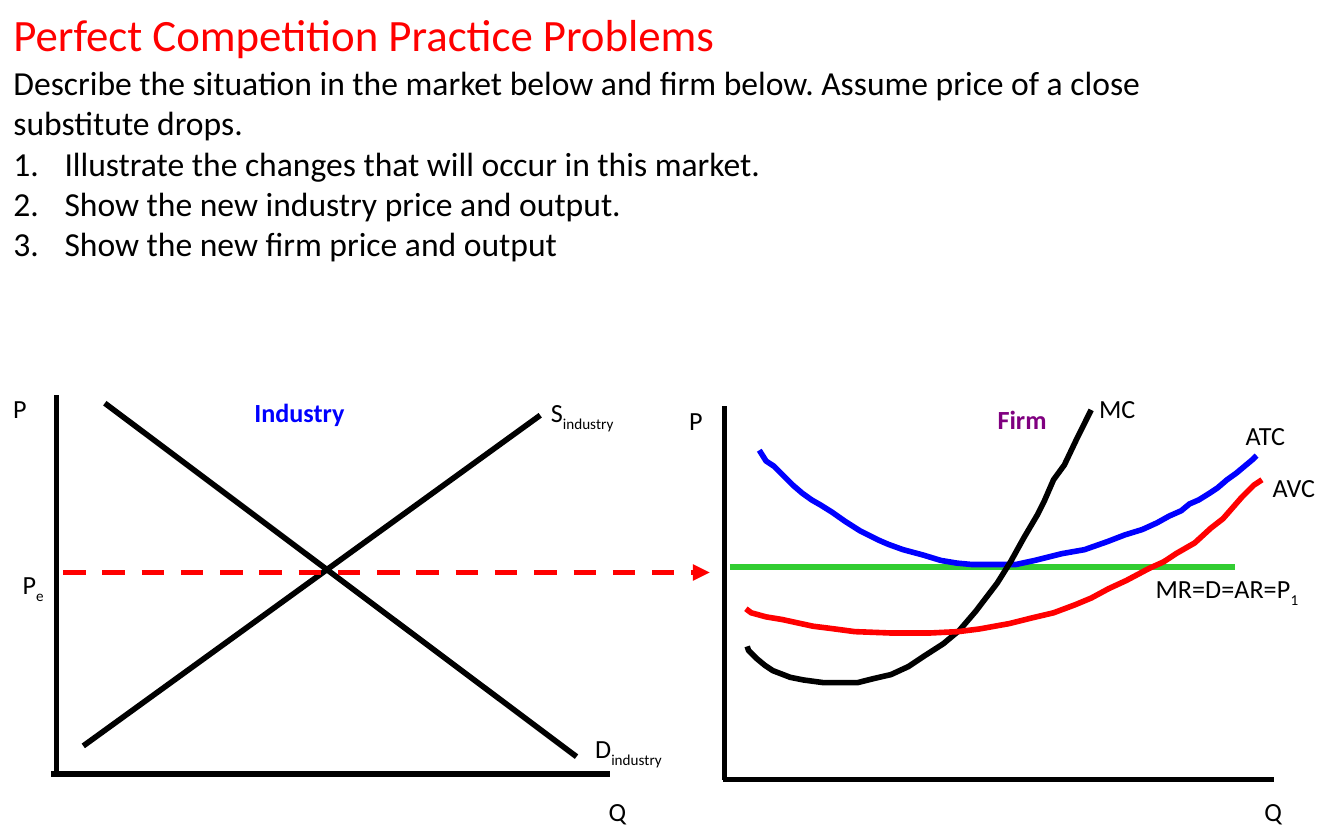
from lxml.etree import SubElement
from pptx import Presentation
from pptx.dml.color import RGBColor
from pptx.enum.dml import MSO_LINE
from pptx.enum.shapes import MSO_CONNECTOR
from pptx.enum.text import MSO_ANCHOR, MSO_AUTO_SIZE, PP_ALIGN
from pptx.oxml.ns import qn
from pptx.util import Inches, Pt

COLORS = {
    "black": "000000",
    "red": "FF0000",
    "blue": "0000FF",
    "green": "32CD32",
    "purple": "800080",
}

TITLE = "Perfect Competition Practice Problems"
INTRO = ("Describe the situation in the market below and firm below. "
         "Assume price of a close substitute drops.")
TASKS = [
    "Illustrate the changes that will occur in this market.",
    "Show the new industry price and output.",
    "Show the new firm price and output",
]

# start, end, color
LINES = [
    ((5.43, 4.22), (9.19, 4.22), "green"),
    ((0.42, 2.94), (0.42, 5.76), "black"),
    ((0.38, 5.76), (4.54, 5.76), "black"),
    ((0.78, 3.00), (4.29, 5.63), "black"),
    ((0.62, 5.55), (4.02, 3.09), "black"),
    ((5.39, 5.80), (5.39, 3.02), "black"),
    ((5.38, 5.80), (9.48, 5.80), "black"),
]

# text, left, top, width, format
LABELS = [
    ("P", 0, 2.87, 0.45, {}),
    ("Q", 4.43, 5.87, 0.51, {}),
    ("S", 4, 2.9, 1.04, {"sub": "industry"}),
    ("D", 4.33, 5.4, 1.07, {"sub": "industry"}),
    (" Industry", 1.75, 2.9, 1.28, {"color": "blue", "bold": True}),
    ("P", 5.03, 2.96, 0.45, {}),
    ("Q", 9.31, 5.87, 0.51, {}),
    (" Firm", 7.28, 2.95, 0.85, {"color": "purple", "bold": True}),
    ("MC", 8.08, 2.87, 0.67, {}),
    ("ATC", 9.17, 3.07, 0.75, {}),
    ("AVC", 9.37, 3.46, 0.8, {}),
    ("MR=D=AR=P", 8.5, 4.21, 1.79, {"sub": "1"}),
    ("P", 0.07, 4.18, 0.56, {"sub": "e"}),
]

ATC = [
    (5.65, 3.35), (5.7, 3.43), (5.76, 3.47), (5.83, 3.54), (5.9, 3.61),
    (5.97, 3.67), (6.04, 3.72), (6.11, 3.76), (6.19, 3.81), (6.29, 3.88),
    (6.4, 3.95), (6.46, 3.98), (6.54, 4.02), (6.61, 4.05), (6.72, 4.09),
    (6.87, 4.13), (7, 4.17), (7.12, 4.19), (7.23, 4.2), (7.34, 4.2),
    (7.45, 4.2), (7.56, 4.2), (7.7, 4.17), (7.9, 4.12), (8.07, 4.09),
    (8.24, 4.03), (8.37, 3.98), (8.5, 3.94), (8.61, 3.89), (8.7, 3.84),
    (8.79, 3.8), (8.85, 3.75), (8.92, 3.72), (9, 3.67), (9.06, 3.63),
    (9.13, 3.57), (9.2, 3.52), (9.26, 3.47), (9.32, 3.42), (9.35, 3.39),
]
MC = [
    (5.56, 4.81), (5.57, 4.84), (5.63, 4.9), (5.69, 4.95), (5.75, 4.99),
    (5.88, 5.04), (5.98, 5.06), (6.13, 5.08), (6.38, 5.08), (6.5, 5.05),
    (6.63, 5.02), (6.76, 4.96), (6.88, 4.88), (7.02, 4.79), (7.14, 4.69),
    (7.26, 4.55), (7.42, 4.34), (7.52, 4.18), (7.62, 4), (7.72, 3.83),
    (7.77, 3.73), (7.84, 3.57), (7.92, 3.46), (8.02, 3.25), (8.07, 3.15),
    (8.12, 3.05),
]
AVC = [
    (5.55, 4.53), (5.59, 4.56), (5.7, 4.59), (5.82, 4.61), (6.05, 4.66),
    (6.21, 4.68), (6.36, 4.7), (6.63, 4.71), (6.92, 4.71), (7.13, 4.7),
    (7.29, 4.68), (7.51, 4.64), (7.67, 4.6), (7.84, 4.56), (8, 4.5),
    (8.12, 4.45), (8.25, 4.38), (8.38, 4.32), (8.55, 4.23), (8.66, 4.18),
    (8.75, 4.12), (8.89, 4.04), (9.01, 3.93), (9.1, 3.86), (9.17, 3.78),
    (9.24, 3.7), (9.33, 3.61), (9.39, 3.57),
]


def tint(name):
    return RGBColor.from_string(COLORS[name])


def write(para, text, size=14, color="black", bold=False, sub=""):
    """Add text, with an optional subscript after it."""
    para.alignment = PP_ALIGN.LEFT
    para.space_before = Pt(0)
    for part, base in ((text, None), (sub, "-25000")):
        if not part:
            continue
        run = para.add_run()
        run.text = part
        font = run.font
        font.name, font.size, font.bold = "Calibri", Pt(size), bold
        font.color.rgb = tint(color)
        if base:
            run._r.get_or_add_rPr().set("baseline", base)


def place(shape, left, top, width, height):
    """Move a placeholder and fix its text to the top."""
    shape.left, shape.top = Inches(left), Inches(top)
    shape.width, shape.height = Inches(width), Inches(height)
    frame = shape.text_frame
    frame.word_wrap = True
    frame.auto_size = MSO_AUTO_SIZE.NONE
    frame.vertical_anchor = MSO_ANCHOR.TOP
    return frame


def number(para, on):
    """Number a paragraph, or clear its bullet."""
    props = para._p.get_or_add_pPr()
    indent = Inches(0.38) if on else 0
    props.set("marL", str(indent))
    props.set("indent", str(-indent))
    if on:
        SubElement(props, qn("a:buFont"), typeface="+mj-lt")
        SubElement(props, qn("a:buAutoNum"), type="arabicPeriod")
    else:
        SubElement(props, qn("a:buNone"))


def label(slide, text, left, top, width, style):
    box = slide.shapes.add_textbox(
        Inches(left), Inches(top), Inches(width), Inches(0.34))
    box.text_frame.word_wrap = True
    write(box.text_frame.paragraphs[0], text, **style)


def ink(line, color):
    line.color.rgb = tint(color)
    line.width = Pt(3)


def draw(slide, start, end, color):
    ends = [Inches(v) for v in (*start, *end)]
    line = slide.shapes.add_connector(MSO_CONNECTOR.STRAIGHT, *ends)
    ink(line.line, color)
    SubElement(line._element.spPr, qn("a:effectLst"))
    return line


def curve(slide, points, color):
    dots = [(Inches(x), Inches(y)) for x, y in points]
    pen = slide.shapes.build_freeform(*dots[0])
    pen.add_line_segments(dots[1:], close=False)
    shape = pen.convert_to_shape()
    shape.fill.background()
    shape.shadow.inherit = False
    ink(shape.line, color)


def arrow(slide, start, end, color):
    """Draw a dashed line with an arrowhead at its end."""
    line = draw(slide, start, end, color).line
    line.dash_style = MSO_LINE.DASH
    SubElement(line._get_or_add_ln(), qn("a:tailEnd"), type="triangle")


def prompt(slide):
    """Fill the title and the numbered tasks."""
    head, body = slide.placeholders
    frame = place(head, 0, 0, 9.51, 0.46)
    write(frame.paragraphs[0], TITLE, size=24, color="red")

    frame = place(body, 0, 0.46, 9.51, 1.56)
    frame.margin_top = 0
    for i, text in enumerate([INTRO, *TASKS]):
        para = frame.add_paragraph() if i else frame.paragraphs[0]
        write(para, text, size=18)
        number(para, i > 0)


def main():
    deck = Presentation()
    deck.slide_width, deck.slide_height = Inches(10), Inches(6.25)
    slide = deck.slides.add_slide(deck.slide_layouts[1])
    prompt(slide)
    for row in LINES:
        draw(slide, *row)
    for points, color in ((ATC, "blue"), (MC, "black"), (AVC, "red")):
        curve(slide, points, color)
    arrow(slide, (0.47, 4.26), (5.28, 4.26), "red")
    for row in LABELS:
        label(slide, *row)
    deck.save("out.pptx")


if __name__ == "__main__":
    main()
